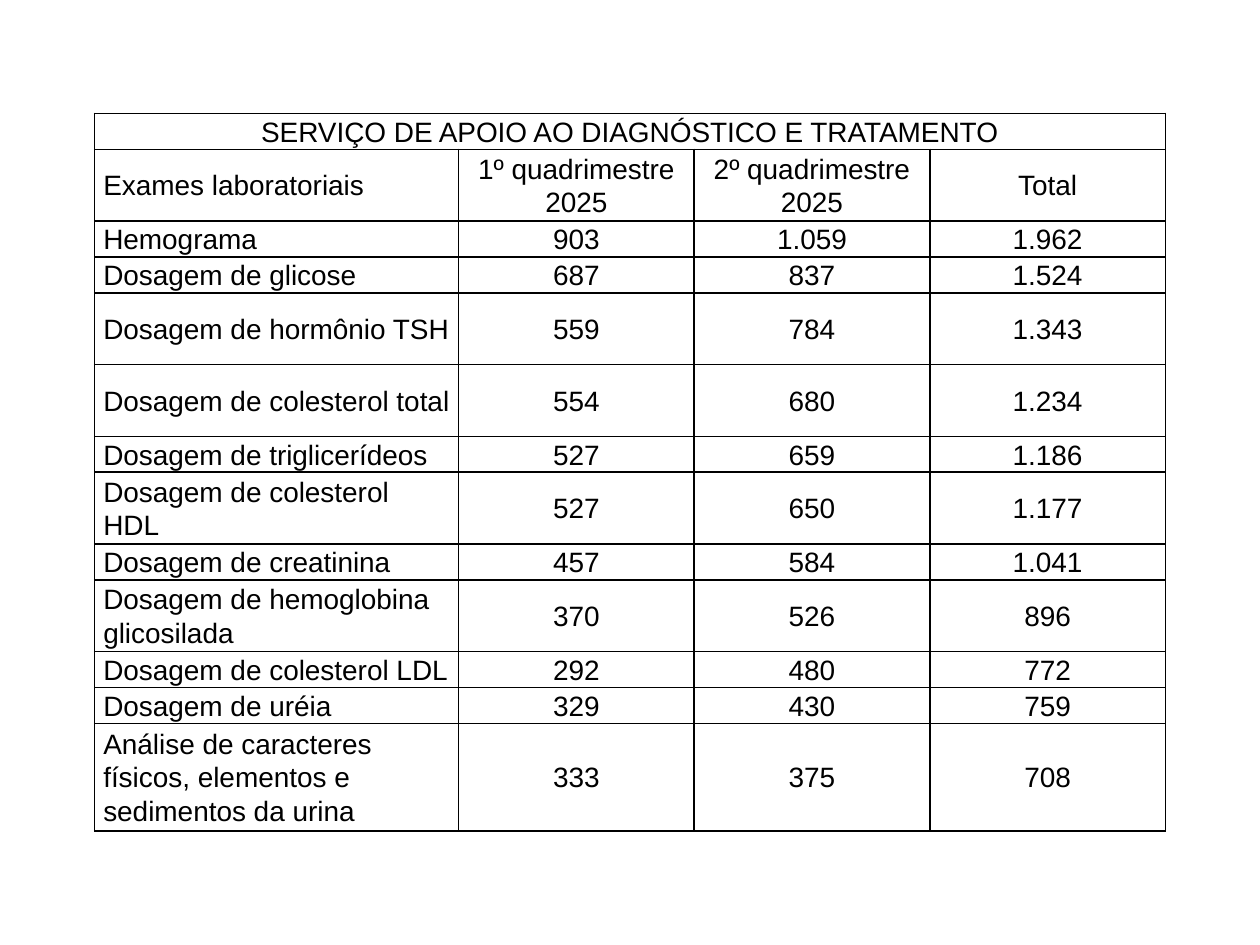
"""Builds a slide with a table of laboratory exams per four-month period."""
import dataclasses

import lxml.etree
import pptx
import pptx.dml.color
import pptx.enum.text
import pptx.oxml.ns
import pptx.util


@dataclasses.dataclass(frozen=True)
class Theme:
    font: str = "Arial"
    size: int = 16
    ink: str = "000000"
    border: float = 1
    line_spacing: float = 1.07


def draw_borders(cell, color, width):
    properties = cell._tc.get_or_add_tcPr()
    qn = pptx.oxml.ns.qn
    for side in ("a:lnL", "a:lnR", "a:lnT", "a:lnB"):
        line = lxml.etree.SubElement(properties, qn(side), w=str(pptx.util.Pt(width)))
        fill = lxml.etree.SubElement(line, qn("a:solidFill"))
        lxml.etree.SubElement(fill, qn("a:srgbClr"), val=color)


theme = Theme()
heading = "SERVIÇO DE APOIO AO DIAGNÓSTICO E TRATAMENTO"
exams = [
    (2, "Exames laboratoriais", "1º quadrimestre 2025", "2º quadrimestre 2025", "Total"),
    (1, "Hemograma", "903", "1.059", "1.962"),
    (1, "Dosagem de glicose", "687", "837", "1.524"),
    (2, "Dosagem de hormônio TSH", "559", "784", "1.343"),
    (2, "Dosagem de colesterol total", "554", "680", "1.234"),
    (1, "Dosagem de triglicerídeos", "527", "659", "1.186"),
    (2, "Dosagem de colesterol HDL", "527", "650", "1.177"),
    (1, "Dosagem de creatinina", "457", "584", "1.041"),
    (2, "Dosagem de hemoglobina glicosilada", "370", "526", "896"),
    (1, "Dosagem de colesterol LDL", "292", "480", "772"),
    (1, "Dosagem de uréia", "329", "430", "759"),
    (3, "Análise de caracteres físicos, elementos e sedimentos da urina", "333", "375", "708"),
]
rows = [(1, heading, "", "", "")] + exams
column_shares = (0.34, 0.22, 0.22, 0.22)

presentation = pptx.Presentation()
presentation.slide_width = pptx.util.Inches(10)
presentation.slide_height = pptx.util.Inches(7.5)
slide = presentation.slides.add_slide(presentation.slide_layouts[6])

width = int(presentation.slide_width * 0.85)
height = int(presentation.slide_height * 0.76)
left = int(presentation.slide_width * 0.075)
top = int(presentation.slide_height * 0.12)
exam_table = slide.shapes.add_table(len(rows), len(column_shares), left, top, width, height).table
exam_table.first_row = False
exam_table.horz_banding = False

for column, share in zip(exam_table.columns, column_shares):
    column.width = int(width * share)

line_height = height / sum(lines for lines, *_ in rows)
for row_index, (lines, *texts) in enumerate(rows):
    exam_table.rows[row_index].height = int(line_height * lines)
    for column_index, text in enumerate(texts):
        cell = exam_table.cell(row_index, column_index)
        draw_borders(cell, theme.ink, theme.border)
        cell.fill.background()
        cell.vertical_anchor = pptx.enum.text.MSO_ANCHOR.MIDDLE
        cell.margin_left = cell.margin_right = pptx.util.Inches(0.07)
        cell.margin_top = cell.margin_bottom = 0
        paragraph = cell.text_frame.paragraphs[0]
        paragraph.text = text
        paragraph.line_spacing = theme.line_spacing
        is_label = column_index == 0 and row_index > 0
        paragraph.alignment = (
            pptx.enum.text.PP_ALIGN.LEFT if is_label else pptx.enum.text.PP_ALIGN.CENTER
        )
        paragraph.font.name = theme.font
        paragraph.font.size = pptx.util.Pt(theme.size)
        paragraph.font.color.rgb = pptx.dml.color.RGBColor.from_string(theme.ink)

exam_table.cell(0, 0).merge(exam_table.cell(0, len(column_shares) - 1))

presentation.save("out.pptx")
